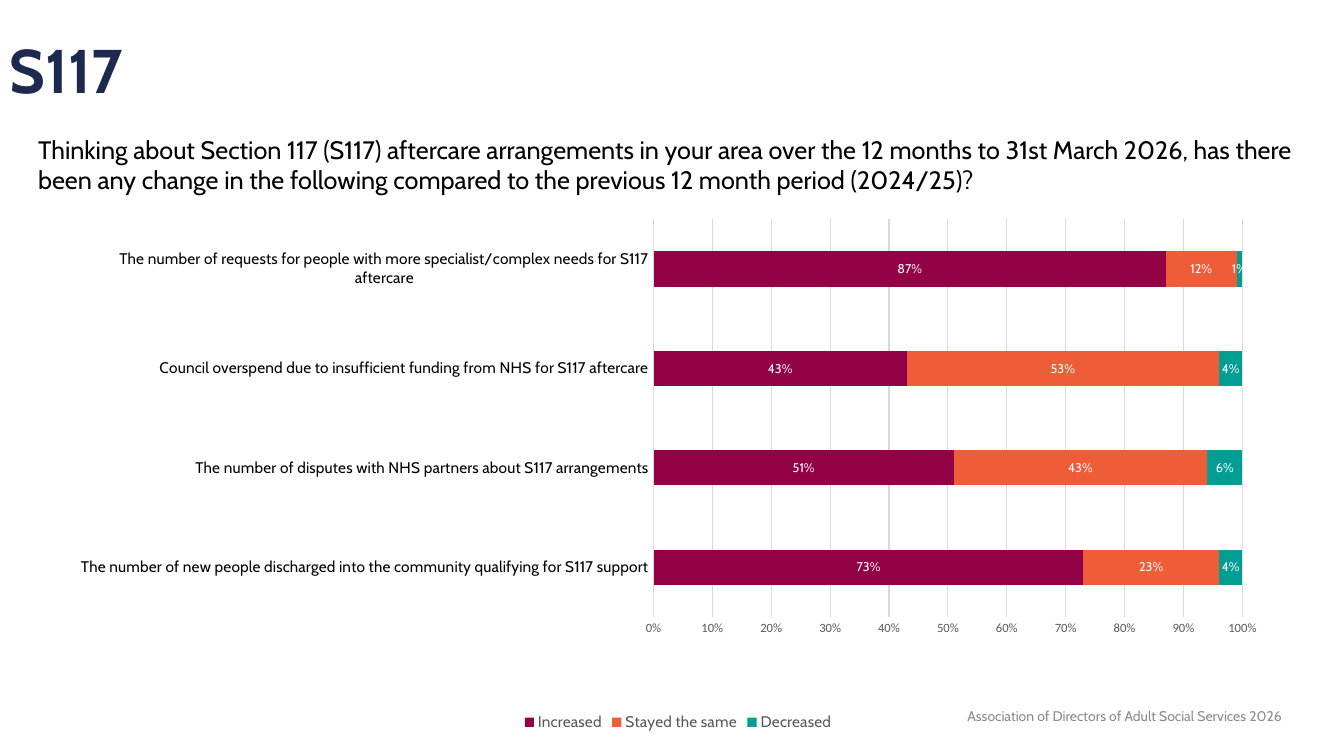
from dataclasses import dataclass

from lxml.etree import SubElement
from pptx import Presentation
from pptx.chart.data import CategoryChartData
from pptx.dml.color import RGBColor
from pptx.enum.chart import XL_CHART_TYPE, XL_LABEL_POSITION, XL_LEGEND_POSITION, XL_TICK_MARK
from pptx.enum.text import MSO_ANCHOR, PP_ALIGN
from pptx.oxml.ns import qn
from pptx.util import Inches, Pt


@dataclass(frozen=True)
class Theme:
    """Fonts, colours and type sizes of the slide."""
    font: str = "Cabin"
    scale_font: str = "Calibri"
    navy: str = "1D2A50"
    black: str = "000000"
    white: str = "FFFFFF"
    muted: str = "595959"
    footer_grey: str = "8C8C8C"
    grid: str = "D9D9D9"
    answers: tuple = ("920146", "EF5C38", "039D93")
    title_size: float = 44
    question_size: float = 18
    category_size: float = 11
    footer_size: float = 10
    small_size: float = 9


QUESTION = (
    "Thinking about Section 117 (S117) aftercare arrangements in your area over the "
    "12 months to 31st March 2026, has there been any change in the following compared "
    "to the previous 12 month period (2024/25)?"
)
TOPICS = (
    "The number of new people discharged into the community qualifying for S117 support",
    "The number of disputes with NHS partners about S117 arrangements",
    "Council overspend due to insufficient funding from NHS for S117 aftercare",
    "The number of requests for people with more specialist/complex needs for S117 aftercare",
)
ANSWERS = {
    "Increased": (0.73, 0.51, 0.43, 0.87),
    "Stayed the same": (0.23, 0.43, 0.53, 0.12),
    "Decreased": (0.04, 0.06, 0.04, 0.01),
}


class SlideBuilder:
    """Adds styled elements to the current slide."""

    def __init__(self, slide, theme):
        self.slide = slide
        self.theme = theme

    def style(self, font, size, color, name=None, bold=False):
        """Apply type settings to a font."""
        font.name = name or self.theme.font
        font.size = Pt(size)
        font.bold = bold
        font.color.rgb = RGBColor.from_string(color)

    def text(self, wording, box, size, color, bold=False,
             align=PP_ALIGN.LEFT, anchor=MSO_ANCHOR.MIDDLE, spacing=None):
        """Add a wrapped text box."""
        frame = self.slide.shapes.add_textbox(*map(Inches, box)).text_frame
        frame.word_wrap = True
        frame.vertical_anchor = anchor
        frame.text = wording
        paragraph = frame.paragraphs[0]
        paragraph.alignment = align
        if spacing:
            paragraph.line_spacing = spacing
        self.style(paragraph.runs[0].font, size, color, bold=bold)

    def stacked_bars(self, topics, answers, box, plot_area):
        """Add the stacked bar chart of answers per topic."""
        theme = self.theme
        survey = CategoryChartData(number_format="0%")
        survey.categories = topics
        for answer, shares in answers.items():
            survey.add_series(answer, shares)
        chart = self.slide.shapes.add_chart(
            XL_CHART_TYPE.BAR_STACKED, *map(Inches, box), survey).chart
        self.style(chart.font, theme.footer_size, theme.black, theme.scale_font)
        chart.has_title = False
        chart.has_legend = True
        chart.legend.position = XL_LEGEND_POSITION.BOTTOM
        chart.legend.include_in_layout = False
        self.style(chart.legend.font, theme.category_size, theme.muted)
        self.axes(chart)
        bars = chart.plots[0]
        bars.gap_width = 182
        bars.overlap = 100
        bars.vary_by_categories = False
        for series, color in zip(bars.series, theme.answers):
            self.series(series, color)
        self.place_plot(chart, plot_area)

    def axes(self, chart):
        """Style the topic axis and the percentage scale."""
        theme = self.theme
        topic_axis, scale = chart.category_axis, chart.value_axis
        for axis in (topic_axis, scale):
            axis.major_tick_mark = axis.minor_tick_mark = XL_TICK_MARK.NONE
        scale.has_major_gridlines = True
        for line in (topic_axis.format.line, scale.major_gridlines.format.line):
            line.color.rgb = RGBColor.from_string(theme.grid)
            line.width = Pt(0.75)
        self.style(topic_axis.tick_labels.font, theme.category_size, theme.black)
        self.style(scale.tick_labels.font, theme.small_size, theme.muted, theme.scale_font)
        scale.format.line.fill.background()
        scale.minimum_scale, scale.maximum_scale, scale.major_unit = 0, 1, 0.1
        scale.tick_labels.number_format = "0%"
        scale.tick_labels.number_format_is_linked = False

    def series(self, series, color):
        """Colour one answer and show its shares."""
        series.format.fill.solid()
        series.format.fill.fore_color.rgb = RGBColor.from_string(color)
        series.invert_if_negative = False
        labels = series.data_labels
        labels.show_value = True
        labels.position = XL_LABEL_POSITION.CENTER
        labels.number_format = "0%"
        labels.number_format_is_linked = False
        self.style(labels.font, self.theme.small_size, self.theme.white)

    def place_plot(self, chart, plot_area):
        """Fix the inner plot area as fractions of the chart."""
        plot = chart.plots[0]._element.getparent()
        layout = plot.find(qn("c:layout"))
        if layout is None:
            layout = SubElement(plot, qn("c:layout"))
            plot.insert(0, layout)
        manual = SubElement(layout, qn("c:manualLayout"))
        settings = [("layoutTarget", "inner"), ("xMode", "edge"), ("yMode", "edge")]
        settings += zip("xywh", plot_area)
        for tag, value in settings:
            SubElement(manual, qn(f"c:{tag}")).set("val", str(value))


def main():
    """Build and save the S117 survey slide."""
    deck = Presentation()
    deck.slide_width, deck.slide_height = Inches(13.33), Inches(7.5)
    theme = Theme()
    builder = SlideBuilder(deck.slides.add_slide(deck.slide_layouts[6]), theme)
    builder.text("S117", (0, 0, 11.5, 1.45), theme.title_size, theme.navy,
                 bold=True, spacing=0.9)
    builder.text("Association of Directors of Adult Social Services 2026",
                 (8.31, 6.9, 4.5, 0.4), theme.footer_size, theme.footer_grey,
                 align=PP_ALIGN.RIGHT)
    builder.stacked_bars(TOPICS, ANSWERS, (0.64, 2.17, 12.17, 5.13),
                         (0.48, 0, 0.48, 0.77))
    builder.text(QUESTION, (0.28, 1.28, 13.06, 0.71), theme.question_size, theme.black,
                 anchor=MSO_ANCHOR.TOP)
    deck.save("out.pptx")


if __name__ == "__main__":
    main()
